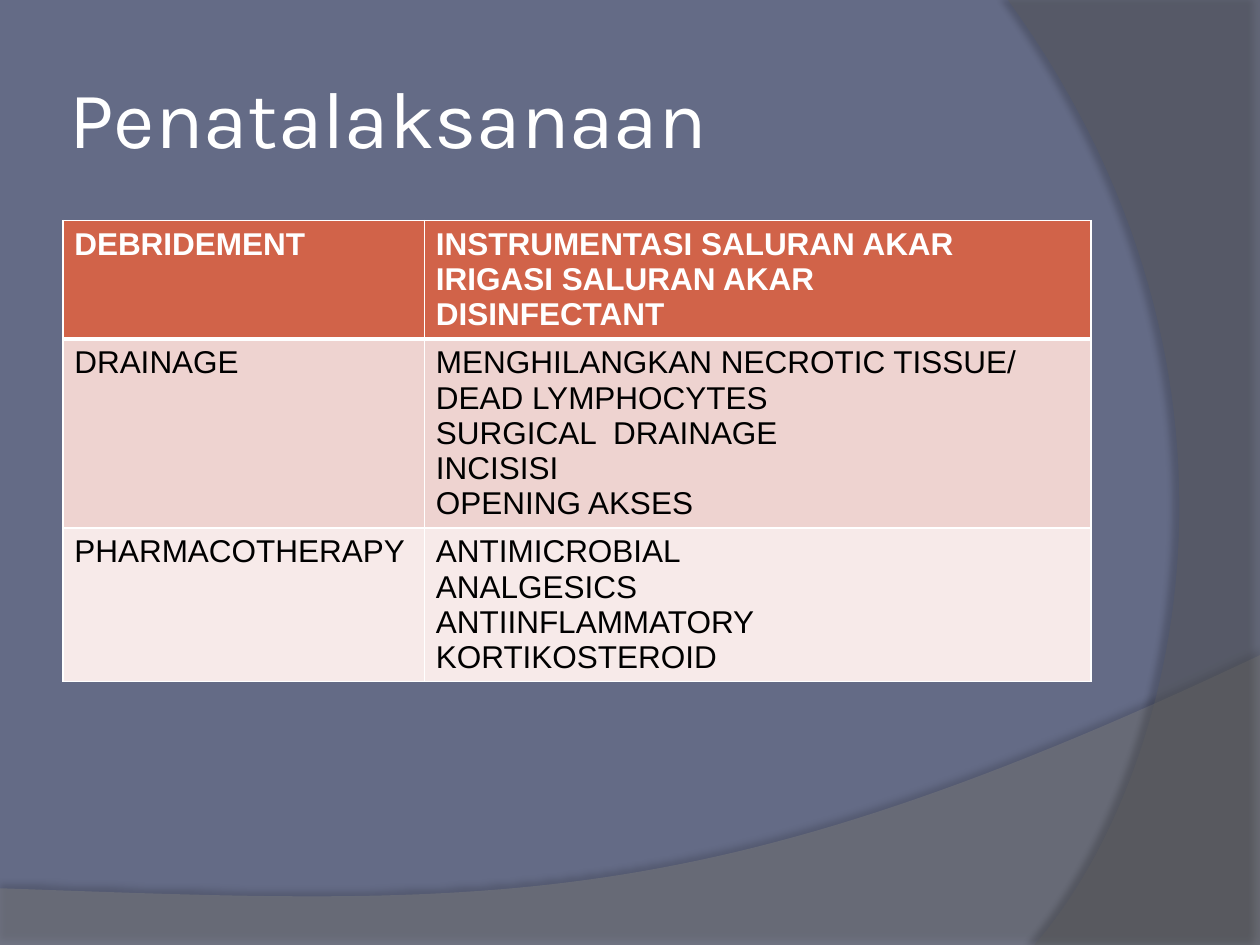
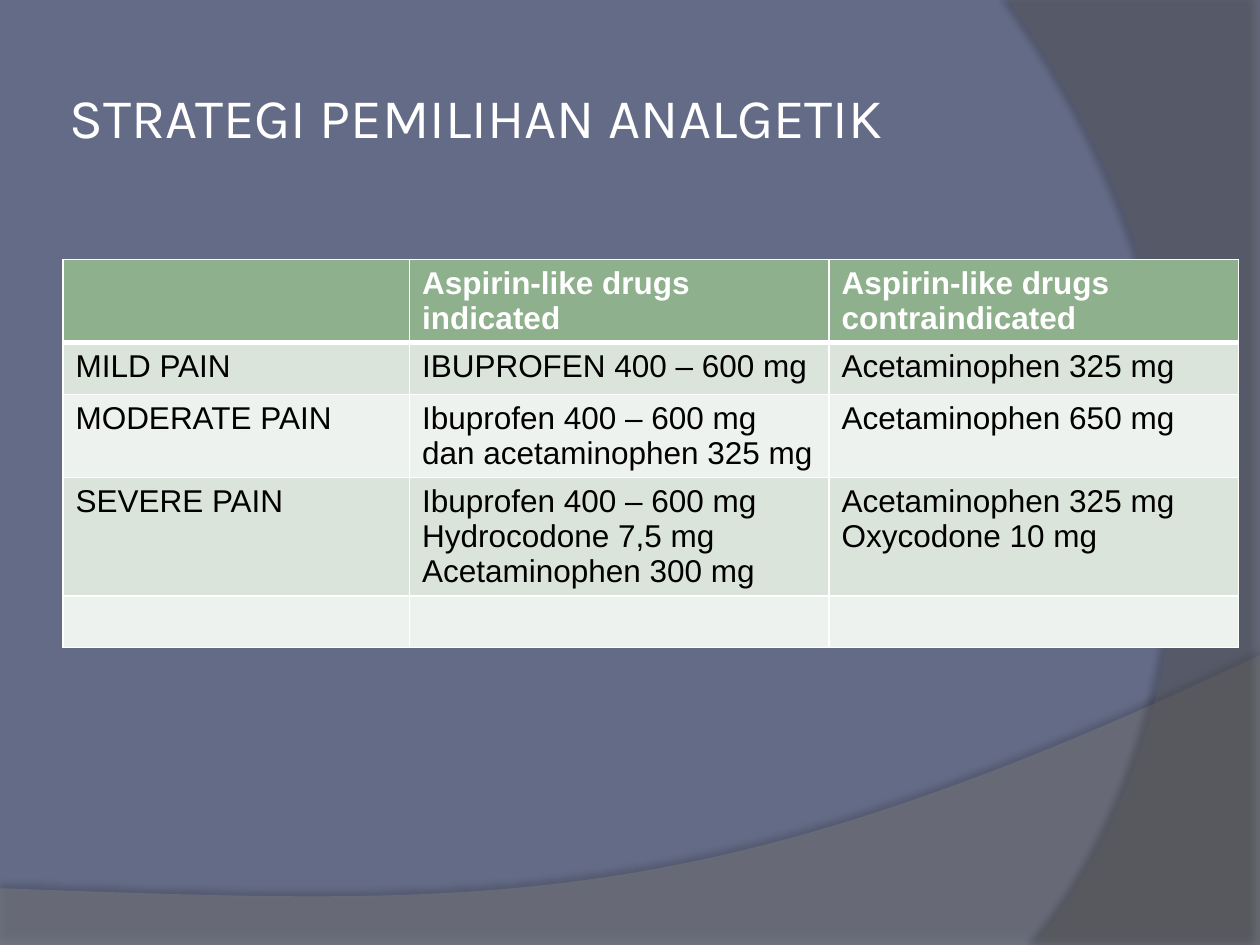
import lxml.etree
import pptx
import pptx.dml.color
import pptx.enum.text
import pptx.oxml
import pptx.oxml.ns
import pptx.util

Inches = pptx.util.Inches
Pt = pptx.util.Pt
RGBColor = pptx.dml.color.RGBColor
qn = pptx.oxml.ns.qn

SLATE = RGBColor(0x64, 0x6B, 0x86)
GREY = RGBColor(0x7F, 0x7F, 0x7F)
DARK_GREY = RGBColor(0x5E, 0x5E, 0x5E)
WHITE = RGBColor(0xFF, 0xFF, 0xFF)
BLACK = RGBColor(0, 0, 0)
ORANGE = [RGBColor.from_string(c) for c in ("D16349", "EED3D0", "F7EAE9")]
GREEN = [RGBColor.from_string(c) for c in ("8FB08C", "DBE4DA", "EEF2EE")]

SLIDES = [
    {
        "title": "Penatalaksanaan", "size": 46, "top": 1.75, "inset": 0.09,
        "cols": [2.87, 5.29], "rows": [0.94, 1.5, 1.22], "colors": ORANGE,
        "cells": [
            ["DEBRIDEMENT", "INSTRUMENTASI SALURAN AKAR\nIRIGASI SALURAN AKAR\nDISINFECTANT"],
            ["DRAINAGE", "MENGHILANGKAN NECROTIC TISSUE/ DEAD LYMPHOCYTES\n"
                         "SURGICAL  DRAINAGE\nINCISISI\nOPENING AKSES"],
            ["PHARMACOTHERAPY", "ANTIMICROBIAL\nANALGESICS\nANTIINFLAMMATORY\nKORTIKOSTEROID"],
        ],
    },
    {
        "title": "STRATEGI PEMILIHAN ANALGETIK", "size": 32, "top": 2.06, "inset": 0.1,
        "cols": [2.75, 3.33, 3.25], "rows": [0.65, 0.41, 0.66, 0.94, 0.41], "colors": GREEN,
        "cells": [
            ["", "Aspirin-like drugs indicated", "Aspirin-like drugs contraindicated"],
            ["MILD PAIN", "IBUPROFEN 400 – 600 mg", "Acetaminophen 325 mg"],
            ["MODERATE PAIN", "Ibuprofen 400 – 600 mg dan acetaminophen 325 mg", "Acetaminophen 650 mg"],
            ["SEVERE PAIN", "Ibuprofen 400 – 600 mg\nHydrocodone 7,5 mg\nAcetaminophen 300 mg",
             "Acetaminophen 325 mg\nOxycodone 10 mg"],
            ["", "", ""],
        ],
    },
]

WAVES = [
    {"corners": [(0, 7.05), (0, 7.5), (10, 7.5)],
     "curve": [(10, 5.2), (5.59, 7.29), (3.91, 7.19), (0, 7.05)],
     "color": GREY, "alpha": 45, "shadow": (35, 4, 3.5, 270)},
    {"corners": [(10, 0), (10, 7.5)],
     "curve": [(8.21, 7.5), (9.35, 6.19), (10.18, 3), (8, 0)],
     "color": DARK_GREY, "alpha": 40, "shadow": (45, 4, 4, 180)},
]


def child(parent, tag, **attrs):
    e = lxml.etree.SubElement(parent, qn(tag))
    for name, value in attrs.items():
        e.set(name, str(value))
    return e


def bezier(curve, steps=60):
    for i in range(steps + 1):
        t = i / steps
        weights = ((1 - t) ** 3, 3 * t * (1 - t) ** 2, 3 * t * t * (1 - t), t ** 3)
        yield tuple(sum(w * p[axis] for w, p in zip(weights, curve)) for axis in (0, 1))


def write(tf, text, font="Arial", size=18, color=BLACK, bold=False):
    for i, line in enumerate(text.split("\n")):
        p = tf.add_paragraph() if i else tf.paragraphs[0]
        p.alignment = pptx.enum.text.PP_ALIGN.LEFT
        if line:
            r = p.add_run()
            r.text = line
            r.font.name, r.font.size, r.font.bold = font, Pt(size), bold
            r.font.color.rgb = color


def add_wave(s, layout, wave):
    points = [(Inches(x), Inches(y)) for x, y in [*wave["corners"], *bezier(wave["curve"])]]
    builder = s.shapes.build_freeform(*points[0])
    builder.add_line_segments(points[1:], close=True)
    sp = builder.convert_to_shape()
    sp.line.fill.background()
    sp.fill.solid()
    sp.fill.fore_color.rgb = wave["color"]
    sp.shadow.inherit = False
    child(sp.element.spPr.find(".//" + qn("a:srgbClr")), "a:alpha", val=wave["alpha"] * 1000)
    alpha, blur, dist, angle = wave["shadow"]
    shadow = child(sp.element.spPr.find(qn("a:effectLst")), "a:outerShdw", blurRad=Pt(blur),
                   dist=Pt(dist), dir=angle * 60000, algn="ctr", rotWithShape=0)
    child(child(shadow, "a:srgbClr", val=BLACK), "a:alpha", val=alpha * 1000)
    layout.shapes.element.append(sp.element)


def add_title(s, text, size):
    sp = s.shapes.title
    sp.left, sp.top, sp.width, sp.height = map(Inches, (0.5, 0.3, 8.17, 1.25))
    tf = sp.text_frame
    tf.word_wrap = True
    tf.auto_size = pptx.enum.text.MSO_AUTO_SIZE.NONE
    tf.vertical_anchor = pptx.enum.text.MSO_ANCHOR.MIDDLE
    tf.margin_left = tf.margin_right = tf.margin_top = tf.margin_bottom = Inches(0.05)
    write(tf, text, font="Karla", size=size, color=WHITE)


def add_borders(cell, **widths):
    tcPr = cell._tc.get_or_add_tcPr()
    for i, (side, width) in enumerate(widths.items()):
        ln = child(tcPr, "a:ln" + side, w=Pt(width))
        child(child(ln, "a:solidFill"), "a:srgbClr", val=WHITE)
        tcPr.insert(i, ln)


def add_table(s, top, inset, cols, rows, colors, cells):
    table = s.shapes.add_table(len(rows), len(cols), Inches(0.5), Inches(top),
                               Inches(sum(cols)), Inches(sum(rows))).table
    for column, width in zip(table.columns, cols):
        column.width = Inches(width)
    header, *bands = colors
    for i, (row, height) in enumerate(zip(table.rows, rows)):
        row.height = Inches(height)
        for cell, text in zip(row.cells, cells[i]):
            cell.margin_left = cell.margin_right = Inches(inset)
            cell.margin_top = cell.margin_bottom = Inches(0.05)
            cell.fill.solid()
            cell.fill.fore_color.rgb = bands[(i - 1) % 2] if i else header
            add_borders(cell, L=1, R=1, T=3 if i == 1 else 1, B=1 if i else 3)
            write(cell.text_frame, text, color=BLACK if i else WHITE, bold=i == 0)


def main():
    """Build the two table slides on one shared layout."""
    prs = pptx.Presentation()
    prs.slide_width, prs.slide_height = Inches(10), Inches(7.5)
    layout = prs.slide_layouts[5]
    layout.background.fill.solid()
    layout.background.fill.fore_color.rgb = SLATE
    for n, content in enumerate(SLIDES):
        s = prs.slides.add_slide(layout)
        if n == 0:
            for wave in WAVES:
                add_wave(s, layout, wave)
        add_title(s, content["title"], content["size"])
        add_table(s, **{k: v for k, v in content.items() if k not in ("title", "size")})
    prs.save("out.pptx")


if __name__ == "__main__":
    main()
